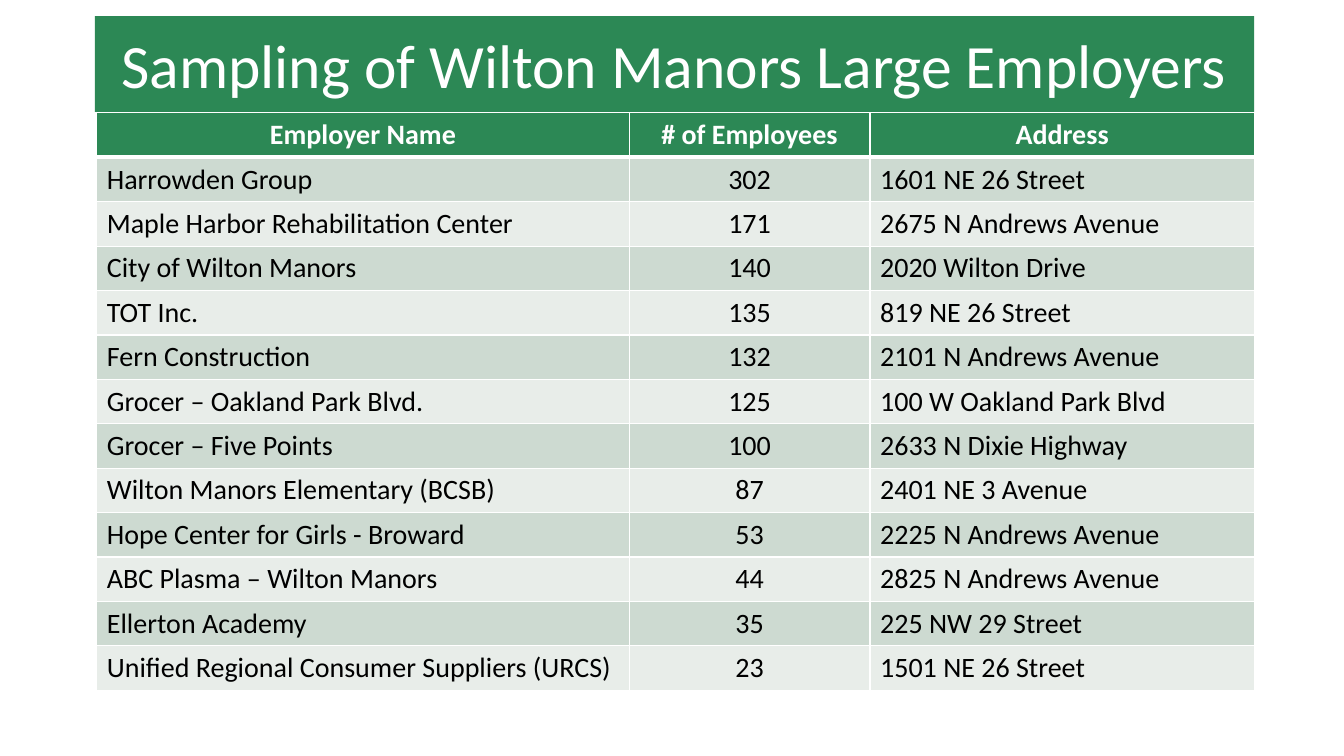
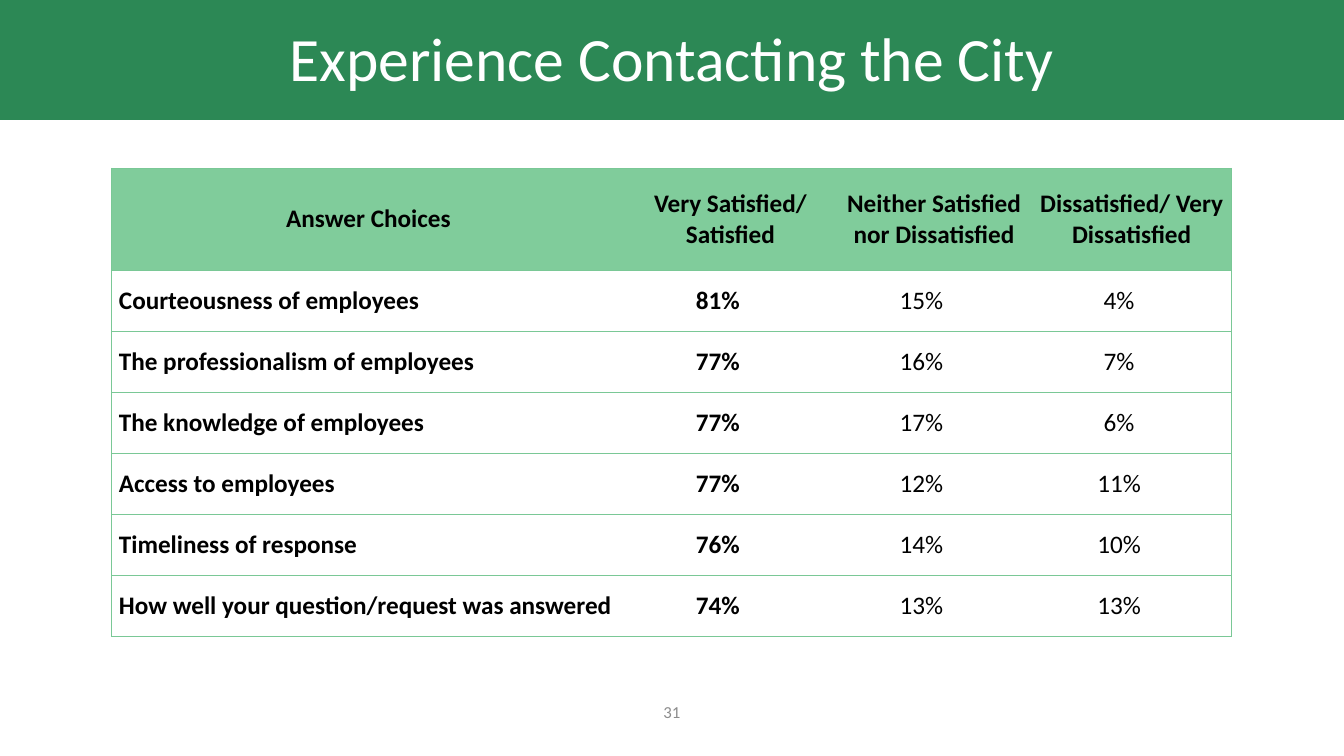
from dataclasses import dataclass

from lxml import etree
from pptx import Presentation
from pptx.dml.color import RGBColor
from pptx.enum.text import MSO_ANCHOR, MSO_AUTO_SIZE, PP_ALIGN
from pptx.oxml.ns import qn
from pptx.util import Inches, Pt

LEFT, CENTER = PP_ALIGN.LEFT, PP_ALIGN.CENTER
TOP, MIDDLE = MSO_ANCHOR.TOP, MSO_ANCHOR.MIDDLE
SLIDE_W, SLIDE_H = 13.33, 7.5
TITLE_ONLY = 5


@dataclass(frozen=True)
class Theme:
    font: str = "Calibri"
    green: str = "2C8855"
    mint: str = "80CC9B"
    mint_line: str = "7AC896"
    bands: tuple = ("CDDAD1", "E8EDE9")
    white: str = "FFFFFF"
    black: str = "000000"
    gray: str = "8C8C8C"
    title_size: int = 44
    employer_size: int = 20
    survey_size: int = 18
    number_size: int = 12


THEME = Theme()

EMPLOYERS = [
    ("Employer Name", "# of Employees", "Address"),
    ("Harrowden Group", "302", "1601 NE 26 Street"),
    ("Maple Harbor Rehabilitation Center", "171", "2675 N Andrews Avenue"),
    ("City of Wilton Manors", "140", "2020 Wilton Drive"),
    ("TOT Inc.", "135", "819 NE 26 Street"),
    ("Fern Construction", "132", "2101 N Andrews Avenue"),
    ("Grocer – Oakland Park Blvd.", "125", "100 W Oakland Park Blvd"),
    ("Grocer – Five Points", "100", "2633 N Dixie Highway"),
    ("Wilton Manors Elementary (BCSB)", "87", "2401 NE 3 Avenue"),
    ("Hope Center for Girls - Broward", "53", "2225 N Andrews Avenue"),
    ("ABC Plasma – Wilton Manors", "44", "2825 N Andrews Avenue"),
    ("Ellerton Academy", "35", "225 NW 29 Street"),
    ("Unified Regional Consumer Suppliers (URCS)", "23", "1501 NE 26 Street"),
]

SATISFACTION = [
    ("Answer Choices", "Very Satisfied/ Satisfied",
     "Neither Satisfied nor Dissatisfied", "Dissatisfied/ Very Dissatisfied"),
    ("Courteousness of employees", "81%", "15%", "4%"),
    ("The professionalism of employees", "77%", "16%", "7%"),
    ("The knowledge of employees", "77%", "17%", "6%"),
    ("Access to employees", "77%", "12%", "11%"),
    ("Timeliness of response", "76%", "14%", "10%"),
    ("How well your question/request was answered", "74%", "13%", "13%"),
]


def inches(*lengths):
    return [Inches(length) for length in lengths]


def style_paragraph(paragraph, size, color, align=CENTER, bold=False):
    paragraph.alignment = align
    for run in paragraph.runs:
        run.font.name = THEME.font
        run.font.size = Pt(size)
        run.font.bold = bold
        run.font.color.rgb = RGBColor.from_string(color)


def add_titled_slide(prs, title, box):
    """Add a slide whose title fills a green band at box (inches)."""
    slide = prs.slides.add_slide(prs.slide_layouts[TITLE_ONLY])
    band = slide.shapes.title
    band.left, band.top, band.width, band.height = inches(*box)
    band.fill.solid()
    band.fill.fore_color.rgb = RGBColor.from_string(THEME.green)
    frame = band.text_frame
    frame.text = title
    frame.word_wrap = True
    frame.auto_size = MSO_AUTO_SIZE.NONE
    frame.vertical_anchor = MIDDLE
    style_paragraph(frame.paragraphs[0], THEME.title_size, THEME.white)
    return slide


def add_grid(slide, rows, origin, col_widths, row_heights):
    """Add an unbanded table, fill in its wording and return it."""
    extent = sum(col_widths), sum(row_heights)
    table = slide.shapes.add_table(len(rows), len(col_widths),
                                   *inches(*origin, *extent)).table
    table.first_row = table.horz_banding = False
    for column, width in zip(table.columns, col_widths):
        column.width = Inches(width)
    for row, height, texts in zip(table.rows, row_heights, rows):
        row.height = Inches(height)
        for cell, text in zip(row.cells, texts):
            cell.text_frame.text = text
    return table


def fill_cell(cell, color):
    cell.fill.solid()
    cell.fill.fore_color.rgb = RGBColor.from_string(color)


def set_borders(cell, color, **widths):
    """Draw the sides named L, R, T, B at the given points; hide the others."""
    properties = cell._tc.get_or_add_tcPr()
    for index, side in enumerate("LRTB"):
        width = widths.get(side, 0)
        line = etree.Element(qn(f"a:ln{side}"), w=str(int(Pt(width))))
        if width:
            solid = etree.SubElement(line, qn("a:solidFill"))
            etree.SubElement(solid, qn("a:srgbClr"), val=color)
        else:
            etree.SubElement(line, qn("a:noFill"))
        properties.insert(index, line)


def add_employer_table(slide):
    table = add_grid(slide, EMPLOYERS, (0.96, 1.12), (5.28, 2.39, 3.81),
                     [0.44] * len(EMPLOYERS))
    for r, row in enumerate(table.rows):
        header = r == 0
        fill = THEME.green if header else THEME.bands[(r - 1) % 2]
        for c, cell in enumerate(row.cells):
            fill_cell(cell, fill)
            set_borders(cell, THEME.white, L=1, R=1,
                        T=3 if r == 1 else 1, B=3 if header else 1)
            cell.vertical_anchor = TOP
            style_paragraph(cell.text_frame.paragraphs[0], THEME.employer_size,
                            THEME.white if header else THEME.black,
                            CENTER if header or c == 1 else LEFT, header)


def add_satisfaction_table(slide):
    header_height, table_height = 1.01, 4.65
    answers = len(SATISFACTION) - 1
    answer_height = (table_height - header_height) / answers
    table = add_grid(slide, SATISFACTION, (1.11, 1.67), (5.09, 2.09, 1.95, 1.97),
                     [header_height] + [answer_height] * answers)
    last_column = len(table.columns) - 1
    for r, row in enumerate(table.rows):
        header = r == 0
        for c, cell in enumerate(row.cells):
            percentage = not header and c > 0
            fill_cell(cell, THEME.mint if header else THEME.white)
            set_borders(cell, THEME.mint_line, T=0.75, B=0.75,
                        L=0.75 * (c == 0), R=0.75 * (c == last_column))
            cell.vertical_anchor = MIDDLE
            cell.margin_top = cell.margin_bottom = 0
            cell.margin_left = Inches(0.07)
            cell.margin_right = Inches(0.32 if percentage else 0.07)
            paragraph = cell.text_frame.paragraphs[0]
            paragraph.space_after = Pt(2)
            style_paragraph(paragraph, THEME.survey_size, THEME.black,
                            CENTER if header or percentage else LEFT,
                            header or c < 2)


def add_page_number(slide, number):
    width = 1
    box = slide.shapes.add_textbox(
        *inches((SLIDE_W - width) / 2, 6.86, width, 0.4))
    frame = box.text_frame
    frame.text = number
    frame.word_wrap = True
    frame.vertical_anchor = MIDDLE
    style_paragraph(frame.paragraphs[0], THEME.number_size, THEME.gray)


def main():
    prs = Presentation()
    prs.slide_width, prs.slide_height = inches(SLIDE_W, SLIDE_H)

    employers = add_titled_slide(prs, "Sampling of Wilton Manors Large Employers",
                                 (0.94, 0.16, 11.5, 0.95))
    add_employer_table(employers)

    experience = add_titled_slide(prs, "Experience Contacting the City",
                                  (0, -0.06, SLIDE_W, 1.25))
    add_satisfaction_table(experience)
    add_page_number(experience, "31")

    prs.save("out.pptx")


if __name__ == "__main__":
    main()
